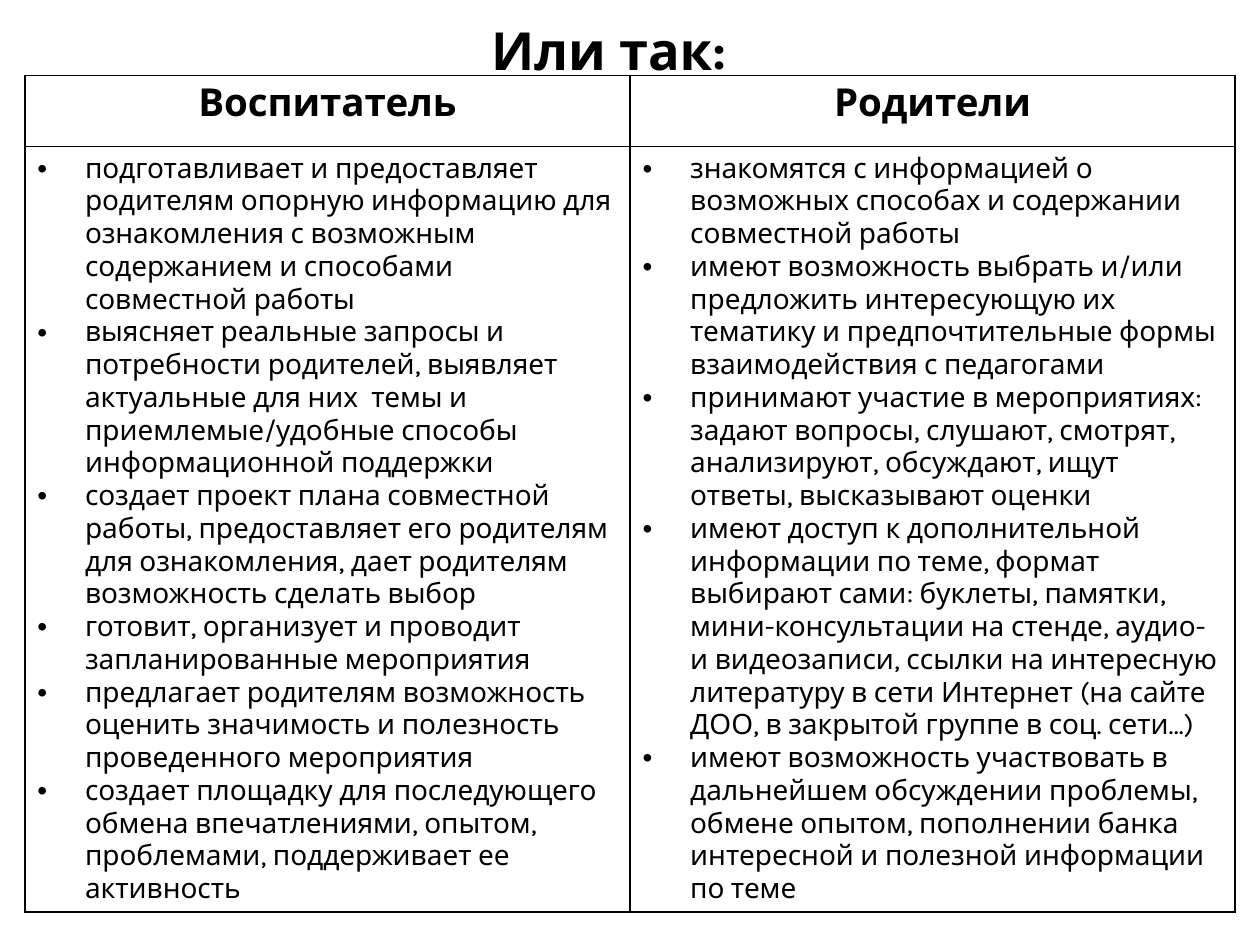
from lxml import etree
from pptx import Presentation
from pptx.dml.color import RGBColor
from pptx.enum.text import MSO_ANCHOR, MSO_AUTO_SIZE, PP_ALIGN
from pptx.oxml.ns import qn
from pptx.util import Cm, Pt

CENTER, JUSTIFY = PP_ALIGN.CENTER, PP_ALIGN.JUSTIFY
MIDDLE = MSO_ANCHOR.MIDDLE
NO_AUTOFIT = MSO_AUTO_SIZE.NONE
FONT = "Karla"
BLACK, WHITE = "000000", "FFFFFF"
INDENT = Cm(0.96)

COLUMNS = {
    "Воспитатель": [
        "подготавливает и предоставляет родителям опорную информацию для ознакомления "
        "с возможным содержанием и способами совместной работы",
        "выясняет реальные запросы и потребности родителей, выявляет актуальные для них  темы "
        "и приемлемые/удобные способы информационной поддержки",
        "создает проект плана совместной работы, предоставляет его родителям для ознакомления, "
        "дает родителям возможность сделать выбор",
        "готовит, организует и проводит запланированные мероприятия",
        "предлагает родителям возможность оценить значимость и полезность проведенного мероприятия",
        "создает площадку для последующего обмена впечатлениями, опытом, проблемами, "
        "поддерживает ее активность",
    ],
    "Родители": [
        "знакомятся с информацией о возможных способах и содержании совместной работы",
        "имеют возможность выбрать и/или предложить интересующую их тематику "
        "и предпочтительные формы взаимодействия с педагогами",
        "принимают участие в мероприятиях: задают вопросы, слушают, смотрят, анализируют, "
        "обсуждают, ищут ответы, высказывают оценки",
        "имеют доступ к дополнительной информации по теме, формат выбирают сами: буклеты, "
        "памятки, мини-консультации на стенде, аудио- и видеозаписи, ссылки на интересную "
        "литературу в сети Интернет (на сайте ДОО, в закрытой группе в соц. сети…)",
        "имеют возможность участвовать в дальнейшем обсуждении проблемы, обмене опытом, "
        "пополнении банка интересной и полезной информации по теме",
    ],
}


def color(value):
    return RGBColor.from_string(value)


def set_font(paragraph, size, bold):
    font = paragraph.font
    font.name, font.size, font.bold = FONT, Pt(size), bold
    font.color.rgb = color(BLACK)


presentation = Presentation()
presentation.slide_width, presentation.slide_height = Cm(25.4), Cm(19.05)
slide = presentation.slides.add_slide(presentation.slide_layouts[5])

# Title
title = slide.shapes.title
title.left, title.top, title.width, title.height = Cm(9.9), Cm(0.13), Cm(6.6), Cm(1.4)
frame = title.text_frame
frame.text = "Или так:"
frame.auto_size = NO_AUTOFIT
frame.vertical_anchor = MIDDLE
frame.margin_left = frame.margin_right = frame.margin_bottom = 0
frame.margin_top = Cm(0.03)
paragraph = frame.paragraphs[0]
paragraph.alignment = JUSTIFY
paragraph.line_spacing = 1.25
paragraph.space_after = Pt(3)
set_font(paragraph, 30, True)

# Table of roles
table = slide.shapes.add_table(2, len(COLUMNS), Cm(0.5), Cm(1.52), Cm(24.4), Cm(16.83)).table
table.first_row = table.horz_banding = False
table.rows[0].height, table.rows[1].height = Cm(1.43), Cm(15.4)

for index, (heading, duties) in enumerate(COLUMNS.items()):
    # Heading
    heading_cell, duties_cell = table.cell(0, index), table.cell(1, index)
    heading_cell.text = heading
    paragraph = heading_cell.text_frame.paragraphs[0]
    paragraph.alignment = CENTER
    set_font(paragraph, 22, True)

    # Bulleted duties
    duties_cell.text = "\n".join(duties)
    for paragraph in duties_cell.text_frame.paragraphs:
        properties = paragraph._p.get_or_add_pPr()
        properties.set("marL", str(INDENT))
        properties.set("indent", str(-INDENT))
        etree.SubElement(properties, qn("a:buFont"), typeface="Arial")
        etree.SubElement(properties, qn("a:buChar"), char="•")
        set_font(paragraph, 16, False)

    # Borders come before the fill in the cell properties
    for cell in (heading_cell, duties_cell):
        properties = cell._tc.get_or_add_tcPr()
        for side in ("a:lnL", "a:lnR", "a:lnT", "a:lnB"):
            border = etree.SubElement(properties, qn(side), w=str(Pt(1)))
            fill = etree.SubElement(border, qn("a:solidFill"))
            etree.SubElement(fill, qn("a:srgbClr"), val=BLACK)
        cell.fill.solid()
        cell.fill.fore_color.rgb = color(WHITE)

presentation.save("out.pptx")
